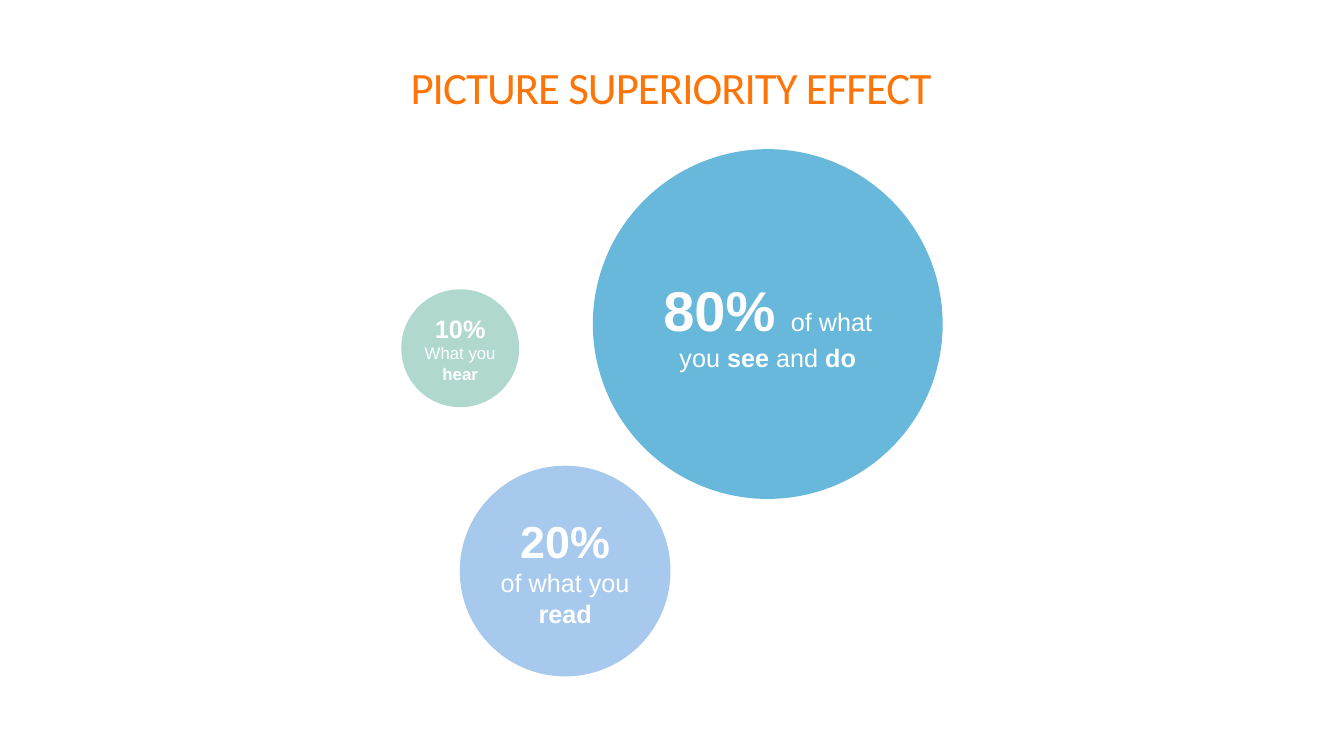
from pptx import Presentation
from pptx import util as u
from pptx.dml.color import RGBColor
from pptx.enum import shapes, text

WHITE = "FFFFFF"


def color(value):
    return RGBColor.from_string(value)


def add_run(paragraph, content, size=18, bold=False, font="Arial", fill=WHITE, spacing=None):
    """Add formatted text; spacing is the letter spacing in points."""
    run = paragraph.add_run()
    run.text = content
    run.font.name = font
    run.font.size = u.Pt(size)
    run.font.bold = bold
    run.font.color.rgb = color(fill)
    if spacing is not None:
        run._r.get_or_add_rPr().set("spc", str(round(spacing * 100)))


class SlideBuilder:
    def __init__(self, presentation):
        self.slide = presentation.slides.add_slide(presentation.slide_layouts[5])
        self.slide.background.fill.solid()
        self.slide.background.fill.fore_color.rgb = color(WHITE)

    def frame(self, shape, anchor):
        """Prepare a shape's text frame without margins."""
        frame = shape.text_frame
        frame.word_wrap = True
        frame.auto_size = text.MSO_AUTO_SIZE.NONE
        frame.vertical_anchor = anchor
        frame.margin_left = frame.margin_right = 0
        frame.margin_top = frame.margin_bottom = 0
        return frame

    def title(self, content, left, top, width, height):
        shape = self.slide.shapes.title
        shape.left, shape.top = u.Inches(left), u.Inches(top)
        shape.width, shape.height = u.Inches(width), u.Inches(height)
        paragraph = self.frame(shape, text.MSO_ANCHOR.TOP).paragraphs[0]
        paragraph.alignment = text.PP_ALIGN.CENTER
        add_run(paragraph, content, size=32, font="Calibri", fill="FD7508", spacing=-0.7)

    def bubble(self, left, top, diameter, fill, lines):
        """Draw a circle; each line is a list of (text, size, bold) runs."""
        shape = self.slide.shapes.add_shape(
            shapes.MSO_SHAPE.OVAL, u.Inches(left), u.Inches(top),
            u.Inches(diameter), u.Inches(diameter))
        shape.shadow.inherit = False
        shape.fill.solid()
        shape.fill.fore_color.rgb = color(fill)
        shape.line.fill.background()
        frame = self.frame(shape, text.MSO_ANCHOR.MIDDLE)
        for index, runs in enumerate(lines):
            paragraph = frame.add_paragraph() if index else frame.paragraphs[0]
            paragraph.alignment = text.PP_ALIGN.CENTER
            for content, size, bold in runs:
                add_run(paragraph, content, size=size, bold=bold)


def main():
    presentation = Presentation()
    presentation.slide_width = u.Inches(13.33)
    presentation.slide_height = u.Inches(7.5)

    builder = SlideBuilder(presentation)
    builder.title("PICTURE SUPERIORITY EFFECT", 1.67, 0.59, 9.97, 0.8)
    builder.bubble(5.88, 1.48, 3.47, "67B8DB", [
        [("80% ", 40, True), ("of what you ", 18, False), ("see", 18, True),
         (" and ", 18, False), ("do", 18, True)]])
    builder.bubble(4.56, 4.62, 2.09, "A7C9EE", [
        [("20%", 32, True)],
        [("of what you ", 18, False), ("read", 18, True)]])
    builder.bubble(3.98, 2.87, 1.17, "B0D8CE", [
        [("10%", 18, True)],
        [("What you ", 12, False), ("hear", 12, True)]])

    presentation.save("out.pptx")


if __name__ == "__main__":
    main()
